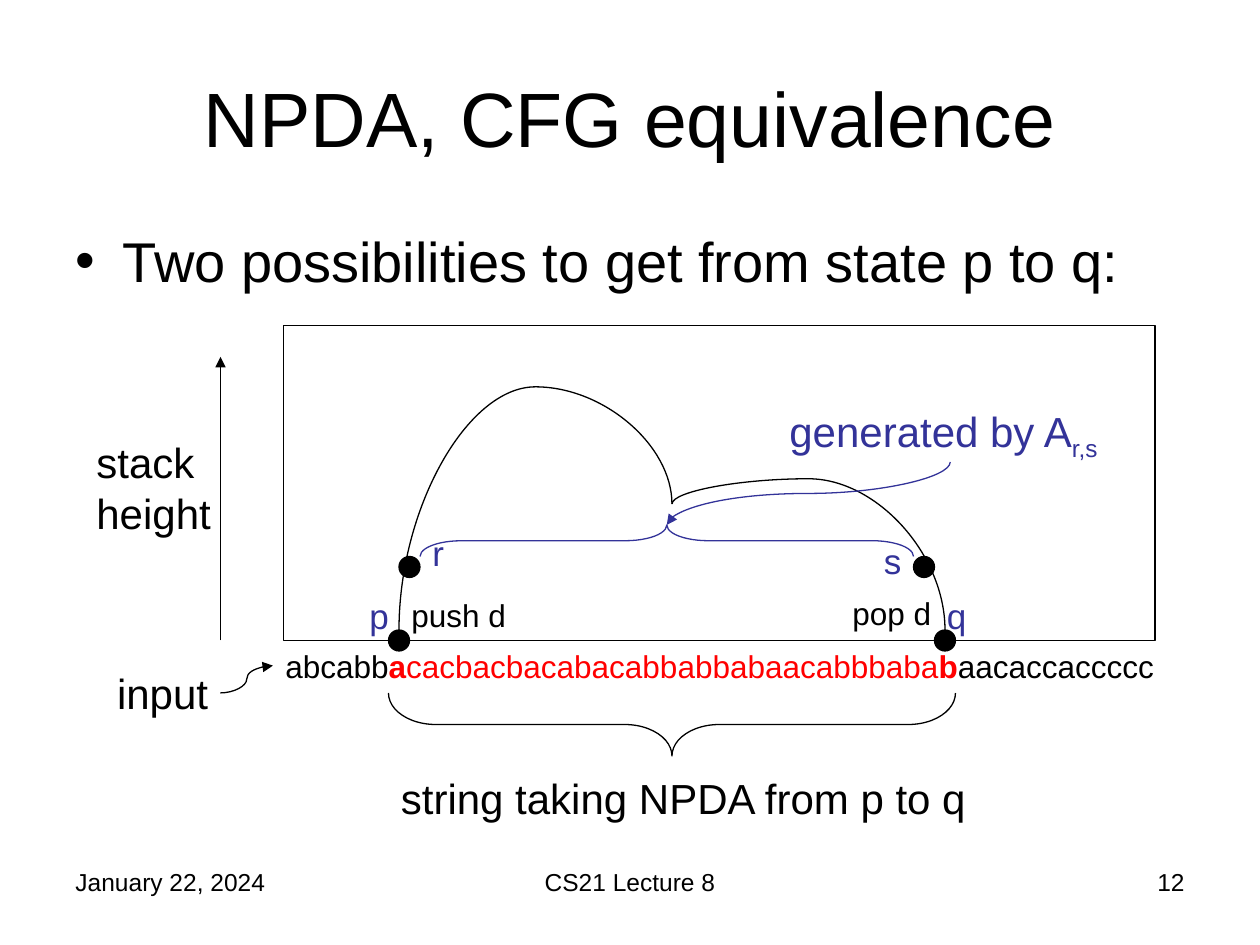
"""Build the slide on the two ways an NPDA gets from state p to state q."""
from lxml import etree
from pptx import Presentation
from pptx import util as u
from pptx.dml.color import RGBColor
from pptx.enum import shapes, text
from pptx.oxml.ns import qn

COLORS = {"ink": "000000", "state": "333399", "string": "FF0000"}
CELL = u.Inches(10) // 120
LEFT, CENTER, RIGHT = text.PP_ALIGN.LEFT, text.PP_ALIGN.CENTER, text.PP_ALIGN.RIGHT


def write(at, wording, size, color="ink", align=LEFT):
    box = slide.shapes.add_textbox(*[round(CELL * n) for n in at])
    box.text_frame.word_wrap = True
    line = box.text_frame.paragraphs[0]
    line.text = wording
    line.alignment = align
    line.font.name, line.font.size = "Arial", u.Pt(size)
    line.font.color.rgb = RGBColor.from_string(COLORS[color])
    return line


def connect(kind, start, end, color="ink", turn=0, bend=None, arrow=False):
    link = slide.shapes.add_connector(kind, *[round(CELL * n) for n in start + end])
    link.line.color.rgb = RGBColor.from_string(COLORS[color])
    link.line.width = u.Pt(0.75)
    props = link._element.spPr
    if turn:
        props.find(qn("a:xfrm")).set("rot", str(turn * 60000))
    if bend is not None:
        guides = props.find(qn("a:prstGeom")).find(qn("a:avLst"))
        etree.SubElement(guides, qn("a:gd"), name="adj1", fmla=f"val {round(bend * 100000)}")
    if arrow:
        etree.SubElement(props.find(qn("a:ln")), qn("a:tailEnd"), type="triangle")
    etree.SubElement(props, qn("a:effectLst"))


deck = Presentation()
deck.slide_width, deck.slide_height = CELL * 120, CELL * 90
slide = deck.slides.add_slide(deck.slide_layouts[1])

headings = [
    (slide.shapes.title, (6, 3.6, 108, 15), "NPDA, CFG equivalence", 44),
    (slide.placeholders[1], (6, 21, 108, 9), "Two possibilities to get from state p to q:", 32),
]
for holder, at, wording, size in headings:
    holder.left, holder.top, holder.width, holder.height = [round(CELL * n) for n in at]
    holder.text_frame.text = wording
    font = holder.text_frame.paragraphs[0].font
    font.name, font.size = "Arial", u.Pt(size)
    font.color.rgb = RGBColor.from_string(COLORS["ink"])

# kind, place, colour, filled, rotation, brace depth
KINDS = shapes.MSO_SHAPE
outlines = [
    (KINDS.RECTANGLE, (27, 31, 83, 30), "ink", False, 0, None),
    (KINDS.LEFT_BRACE, (61, 42, 6, 54), "ink", False, 270, 0.75),
    (KINDS.LEFT_BRACE, (62, 28, 3, 47), "state", False, 90, 1.31),
]
states = [(38, 61), (90, 61), (39, 54), (88, 54)]
outlines += [(KINDS.OVAL, (x - 1, y - 1, 2, 2), "ink", True, 0, None) for x, y in states]
for kind, at, color, filled, turn, depth in outlines:
    outline = slide.shapes.add_shape(kind, *[CELL * n for n in at])
    outline.shadow.inherit = False
    outline.rotation = turn
    outline.line.color.rgb = RGBColor.from_string(COLORS[color])
    outline.line.width = u.Pt(0.75)
    if filled:
        outline.fill.solid()
        outline.fill.fore_color.rgb = RGBColor.from_string(COLORS[color])
    else:
        outline.fill.background()
    if depth:
        outline.adjustments[0] = depth

STRAIGHT, CURVE = shapes.MSO_CONNECTOR.STRAIGHT, shapes.MSO_CONNECTOR.CURVE
connect(STRAIGHT, (21, 61), (21, 34), arrow=True)
connect(CURVE, (21, 66), (26, 63.4), arrow=True)
connect(CURVE, (45, 41), (57, 67), turn=270, bend=1.93)
connect(CURVE, (71, 67), (83, 41), turn=90, bend=-0.2)
connect(CURVE, (74, 33.5), (80, 60.5), "state", turn=90, arrow=True)

labels = [
    ((8, 41, 16, 10.8), "stack height", 24, "ink", LEFT),
    ((9, 63, 12, 6), "input", 24, "ink", RIGHT),
    ((37, 73, 58, 6), "string taking NPDA from p to q", 24, "ink", LEFT),
    ((38, 56.2, 12, 4.8), "push d", 18, "ink", LEFT),
    ((80, 56, 12, 4.8), "pop d", 18, "ink", LEFT),
    ((34, 56, 5, 5.2), "p", 20, "state", LEFT),
    ((89, 56, 5, 5.2), "q", 20, "state", LEFT),
    ((40, 50, 5, 5.2), "r", 20, "state", LEFT),
    ((83, 50.8, 5, 5.2), "s", 20, "state", LEFT),
    ((6, 82, 28, 6.25), "January 22, 2024", 14, "ink", LEFT),
    ((41, 82, 38, 6.25), "CS21 Lecture 8", 14, "ink", CENTER),
    ((86, 82, 28, 6.25), "12", 14, "ink", RIGHT),
]
for label in labels:
    write(*label)

generated = write((74, 38, 33, 6), "generated by A", 24, "state")
subscript = generated.add_run()
subscript.text = "r,s"
subscript.font._element.set("baseline", "-25000")

tape = write((26, 61, 87, 4.8), "abcabb", 18)
pieces = [
    ("a", "string", True),
    ("cacbacbacabacabbabbabaacabbbaba", "string", False),
    ("b", "string", True),
    ("aacaccaccccc", "ink", False),
]
for letters, color, bold in pieces:
    piece = tape.add_run()
    piece.text = letters
    piece.font.bold = bold
    piece.font.color.rgb = RGBColor.from_string(COLORS[color])

deck.save("out.pptx")
